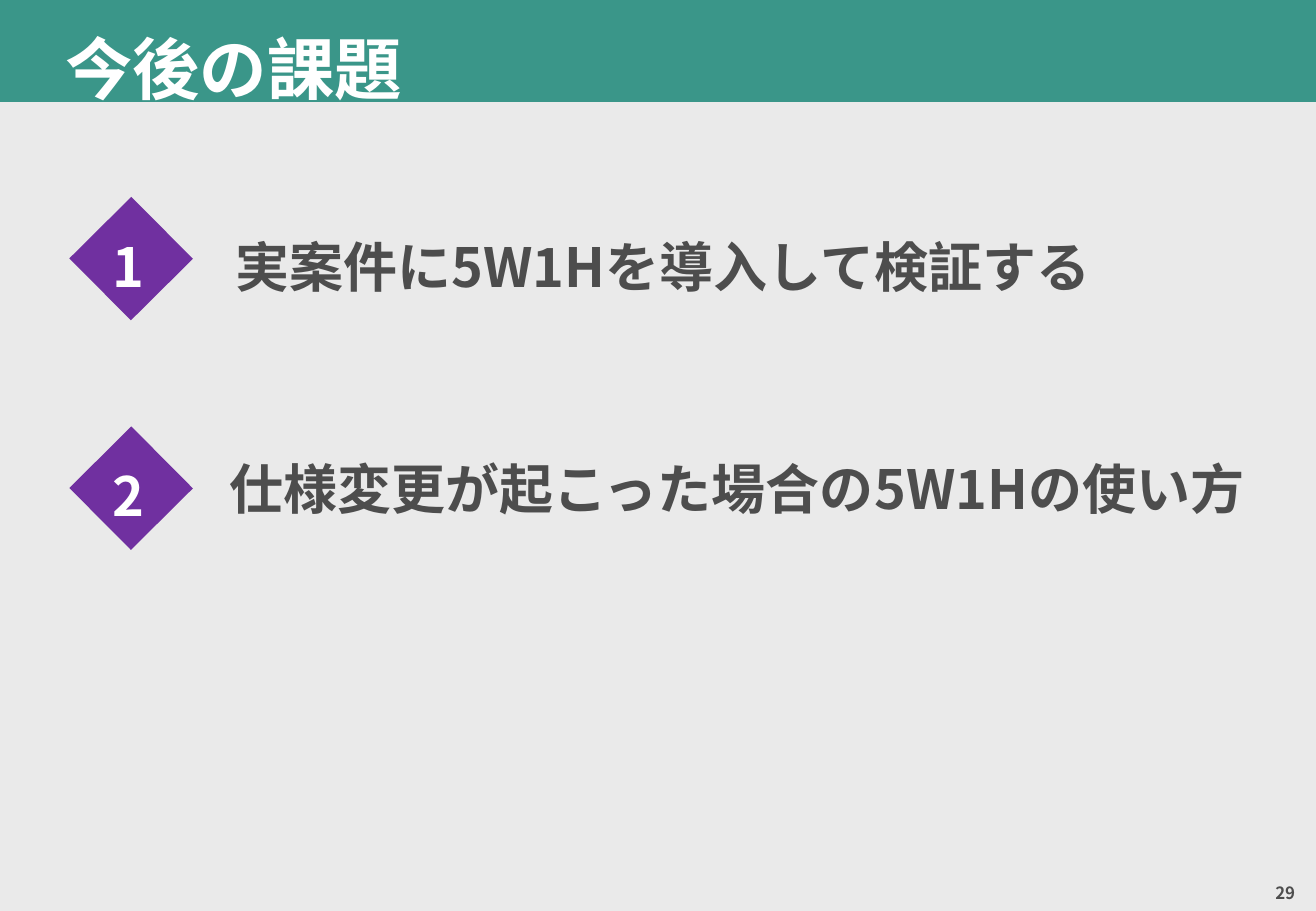
from dataclasses import dataclass

from lxml import etree
from pptx import Presentation
from pptx.dml.color import RGBColor
from pptx.enum import shapes, text
from pptx.oxml import ns
from pptx.util import Pt

# Content
TITLE = "今後の課題"
PAGE_NUMBER = "29"
# label, label left, label width, label drop below the diamond's top
ISSUES = [
    ("実案件に5W1Hを導入して検証する", 132.5, 594.7, 7.2),
    ("仕様変更が起こった場合の5W1Hの使い方", 128.9, 629.3, 2.9),
]


@dataclass(frozen=True)
class Theme:
    font: str = "Noto Sans CJK JP"
    background: str = "EAEAEA"
    header: str = "3A9689"
    diamond: str = "7030A0"
    light: str = "FFFFFF"
    dark: str = "4D4D4D"
    title_size: int = 40
    issue_size: int = 32
    page_size: int = 10


THEME = Theme()

# Layout in points
WIDTH, HEIGHT = 780, 540
HEADER_HEIGHT = 60.5
DIAMOND_LEFT, DIAMOND_SIDE, DIAMOND_ANGLE = 51.8, 51.8, 45.2
FIRST_TOP, ROW_PITCH = 127.4, 136.1
NUMBER_WIDTH, TEXT_HEIGHT, NUMBER_DROP = 36.7, 46, 7.2


def add_block(slide, left, top, width, height, color):
    shape = slide.shapes.add_shape(
        shapes.MSO_SHAPE.RECTANGLE, Pt(left), Pt(top), Pt(width), Pt(height))
    shape.shadow.inherit = False
    shape.fill.solid()
    shape.fill.fore_color.rgb = RGBColor.from_string(color)
    shape.line.fill.background()
    return shape


def set_text(shape, words, size, color, align=text.PP_ALIGN.LEFT):
    paragraph = shape.text_frame.paragraphs[0]
    paragraph.text = words
    paragraph.alignment = align
    font = paragraph.font
    font.name, font.size, font.bold = THEME.font, Pt(size), True
    font.color.rgb = RGBColor.from_string(color)
    # East Asian glyphs need their own typeface entry
    latin = paragraph._p.pPr.find(ns.qn("a:defRPr")).find(ns.qn("a:latin"))
    east_asian = etree.Element(ns.qn("a:ea"), typeface=THEME.font)
    latin.addnext(east_asian)
    return paragraph


def add_label(slide, left, top, width, words, wrap):
    box = slide.shapes.add_textbox(Pt(left), Pt(top), Pt(width), Pt(TEXT_HEIGHT))
    box.text_frame.word_wrap = wrap
    box.text_frame.auto_size = text.MSO_AUTO_SIZE.SHAPE_TO_FIT_TEXT
    color = THEME.dark if wrap else THEME.light
    set_text(box, words, THEME.issue_size, color)


def center_without_margins(frame):
    frame.vertical_anchor = text.MSO_ANCHOR.MIDDLE
    frame.margin_left = frame.margin_right = 0
    frame.margin_top = frame.margin_bottom = 0
    frame.word_wrap = True


def main():
    presentation = Presentation()
    presentation.slide_width, presentation.slide_height = Pt(WIDTH), Pt(HEIGHT)
    slide = presentation.slides.add_slide(presentation.slide_layouts[6])
    slide.background.fill.solid()
    slide.background.fill.fore_color.rgb = RGBColor.from_string(THEME.background)

    # Page number
    page = slide.shapes.add_textbox(Pt(585.4), Pt(519.1), Pt(182.2), Pt(20.2))
    center_without_margins(page.text_frame)
    set_text(page, PAGE_NUMBER, THEME.page_size, THEME.dark, text.PP_ALIGN.RIGHT)

    # Header band, title indented by one character
    header = add_block(slide, 0, 0, WIDTH, HEADER_HEIGHT, THEME.header)
    center_without_margins(header.text_frame)
    header.text_frame.margin_left = Pt(THEME.title_size - 1.4)
    title = set_text(header, TITLE, THEME.title_size, THEME.light)
    title.line_spacing = 1.4
    title.space_after = Pt(6)

    # Numbered issues
    number_left = DIAMOND_LEFT + (DIAMOND_SIDE - NUMBER_WIDTH) / 2
    for index, (label, left, width, drop) in enumerate(ISSUES):
        top = FIRST_TOP + index * ROW_PITCH
        diamond = add_block(slide, DIAMOND_LEFT, top, DIAMOND_SIDE, DIAMOND_SIDE,
                            THEME.diamond)
        diamond.rotation = DIAMOND_ANGLE
        add_label(slide, number_left, top + NUMBER_DROP, NUMBER_WIDTH,
                  str(index + 1), wrap=False)
        add_label(slide, left, top + drop, width, label, wrap=True)

    presentation.save("out.pptx")


if __name__ == "__main__":
    main()
